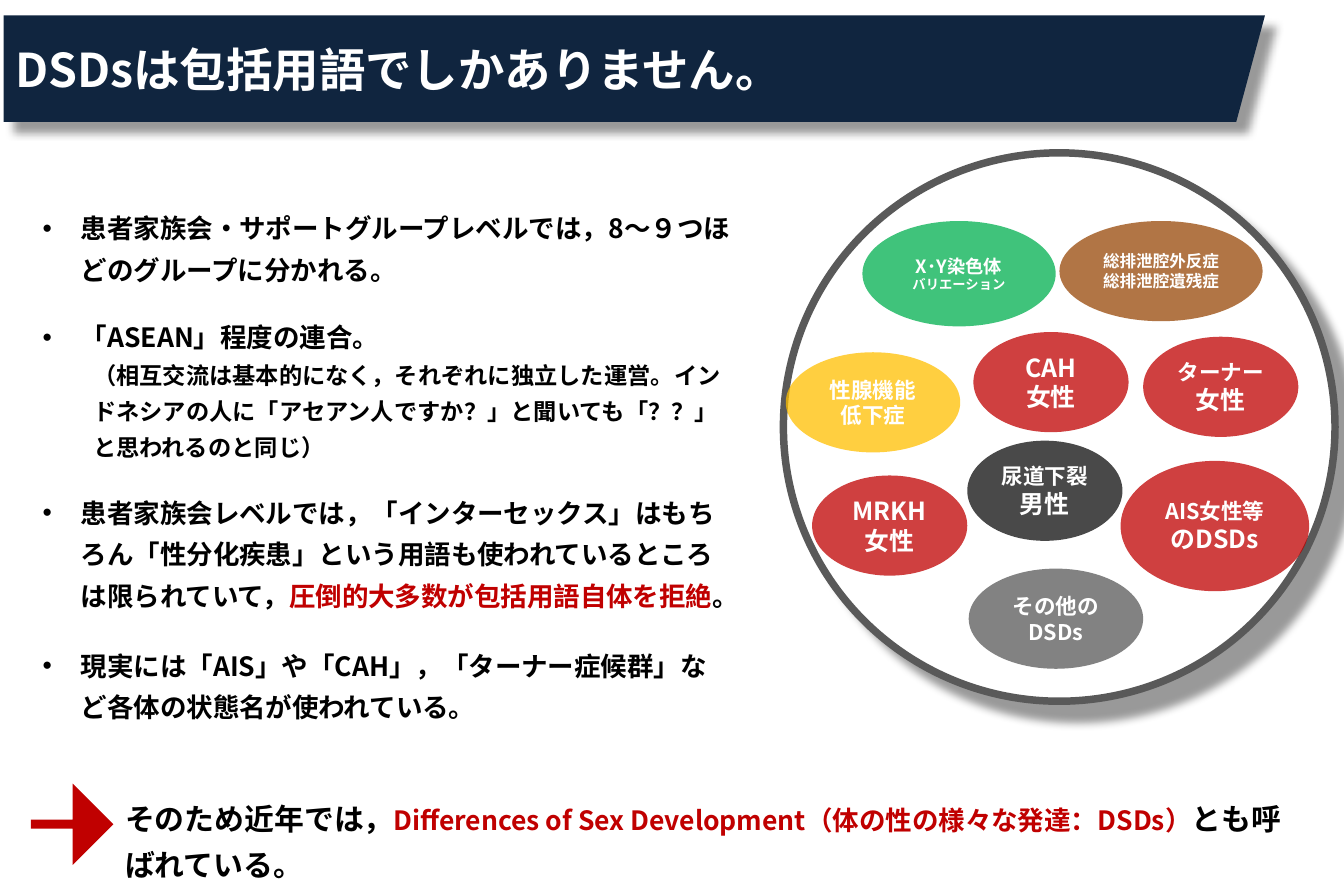
import lxml.etree
import pptx
import pptx.dml.color
import pptx.enum.shapes
import pptx.enum.text
import pptx.oxml.ns
import pptx.util

Cm, Pt = pptx.util.Cm, pptx.util.Pt
RGBColor = pptx.dml.color.RGBColor
SHAPE = pptx.enum.shapes.MSO_SHAPE
CENTER = pptx.enum.text.PP_ALIGN.CENTER
MIDDLE = pptx.enum.text.MSO_ANCHOR.MIDDLE
qn = pptx.oxml.ns.qn

FONT = "Noto Sans CJK JP"
BLACK = RGBColor(0x00, 0x00, 0x00)
WHITE = RGBColor(0xFF, 0xFF, 0xFF)
RED = RGBColor(0xC0, 0x00, 0x00)
NAVY = RGBColor(0x10, 0x25, 0x3F)
GRAY = RGBColor(0x59, 0x59, 0x59)
CHARCOAL = RGBColor(0x0D, 0x0D, 0x0D)
GREEN = RGBColor(0x00, 0xB0, 0x50)
BROWN = RGBColor(0x98, 0x48, 0x07)
AMBER = RGBColor(0xFF, 0xC0, 0x00)

# A run is (text, size) or (text, size, colour); a paragraph is a list of runs.
TITLE = [("DSDsは包括用語でしかありません。", 28)]
TITLE_OUTLINE = [(0.08, 0.33), (26.9, 0.33), (26.29, 2.59), (0.08, 2.59)]

# Space before in points, bulleted or not, runs
POINTS = [
    (0, True, [("患者家族会・サポートグループレベルでは，8～９つほどのグループに分かれる。", 16)]),
    (15.6, True, [("「ASEAN」程度の連合。", 16)]),
    (0, False, [("（相互交流は基本的になく，それぞれに独立した運営。インドネシアの人に"
                 "「アセアン人ですか？」と聞いても「？？」と思われるのと同じ）", 14)]),
    (15.6, True, [("患者家族会レベルでは，「インターセックス」はもちろん"
                   "「性分化疾患」という用語も使われているところは限られていて，", 16),
                  ("圧倒的大多数が包括用語自体を拒絶", 16, RED), ("。", 16)]),
    (17.2, True, [("現実には「AIS」や「CAH」，「ターナー症候群」など各体の状態名が使われている。", 16)]),
]
CONCLUSION = [
    ("そのため近年では，", 18),
    ("Differences of Sex Development（体の性の様々な発達：DSDs）", 16, RED),
    ("とも呼ばれている。", 18),
]

SMALL, MEDIUM = (3.3, 2.13), (3.71, 2.13)
# Left and top, size, colour, paragraphs
CONDITIONS = [
    ((17.27, 10.11), SMALL, RED, [[("MRKH女性", 15)]]),
    ((20.57, 9.37), SMALL, CHARCOAL, [[("尿道下裂", 13)], [("男性", 15)]]),
    ((20.7, 7.06), SMALL, RED, [[("CAH", 15)], [("女性", 15)]]),
    ((23.83, 9.8), (4.01, 2.77), RED, [[("AIS女性等", 13), ("のDSDs", 15)]]),
    ((24.31, 7.16), SMALL, RED, [[("ターナー", 13)], [("女性", 15)]]),
    ((18.34, 4.7), (4.11, 2.24), GREEN, [[("X･Y染色体", 11)], [("バリエーション", 8)]]),
    ((22.53, 4.7), (4.32, 2.13), BROWN, [[("総排泄腔外反症", 10)], [("総排泄腔遺残症", 10)]]),
    ((16.71, 7.49), MEDIUM, AMBER, [[("性腺機能", 13)], [("低下症", 13)]]),
    ((20.6, 12.09), MEDIUM, GRAY, [[("その他の", 13)], [("DSDs", 13)]]),
]


def add_child(parent, tag, **attributes):
    return lxml.etree.SubElement(parent, qn(tag), attributes)


def paint(shape, color, opacity=100, shadow_distance=None):
    """Fill without outline; a shadow falls to the lower right if a distance is given."""
    shape.fill.solid()
    shape.fill.fore_color.rgb = color
    shape.line.fill.background()
    shape.shadow.inherit = False
    if opacity < 100:
        fill_color = shape._element.spPr.find(qn("a:solidFill"))[0]
        add_child(fill_color, "a:alpha", val=str(opacity * 1000))
    if shadow_distance:
        effects = shape._element.spPr.find(qn("a:effectLst"))
        shadow = add_child(effects, "a:outerShdw", blurRad=str(Pt(5)),
                           dist=str(Pt(shadow_distance)), dir=str(45 * 60000),
                           algn="tl", rotWithShape="0")
        shadow_color = add_child(shadow, "a:srgbClr", val=str(BLACK))
        add_child(shadow_color, "a:alpha", val="40000")


def write(paragraph, runs, color):
    sizes = {run[1] for run in runs}
    font = paragraph.font
    font.name, font.bold = FONT, True
    add_child(paragraph._p.pPr.find(qn("a:defRPr")), "a:ea", typeface=FONT)
    if len(sizes) == 1:
        font.size = Pt(runs[0][1])
    one_color = all(len(run) == 2 for run in runs)
    if one_color:
        font.color.rgb = color
    for text, size, *own_color in runs:
        run = paragraph.add_run()
        run.text = text
        if len(sizes) > 1:
            run.font.size = Pt(size)
        if not one_color:
            run.font.color.rgb = own_color[0] if own_color else color


def next_paragraph(frame, index):
    return frame.add_paragraph() if index else frame.paragraphs[0]


def add_text_frame(shapes, left, top, width, height):
    frame = shapes.add_textbox(Cm(left), Cm(top), Cm(width), Cm(height)).text_frame
    frame.word_wrap = True
    return frame


def add_points(shapes):
    frame = add_text_frame(shapes, 0.66, 4.19, 15.16, 12.14)
    for index, (space, bulleted, runs) in enumerate(POINTS):
        paragraph = next_paragraph(frame, index)
        paragraph.line_spacing = 1.3
        paragraph.space_before = Pt(space)
        properties = paragraph._p.get_or_add_pPr()
        if bulleted:
            properties.set("marL", str(Cm(0.81)))
            properties.set("indent", str(-Cm(0.81)))
            add_child(add_child(properties, "a:buClr"), "a:srgbClr", val=str(BLACK))
            add_child(properties, "a:buFont", typeface="Arial")
            add_child(properties, "a:buChar", char="•")
        else:
            paragraph.level = 1
            properties.set("marL", str(Cm(1.07)))
            properties.set("indent", "0")
            add_child(properties, "a:buNone")
        write(paragraph, runs, BLACK)


def add_conditions(shapes):
    group = shapes.add_group_shape().shapes
    circle = group.add_shape(SHAPE.OVAL, Cm(16.66), Cm(3.25), Cm(11.73), Cm(11.66))
    paint(circle, WHITE, shadow_distance=15)
    circle.line.color.rgb = GRAY
    circle.line.width = Pt(4.5)
    for position, size, color, lines in CONDITIONS:
        condition = group.add_shape(SHAPE.OVAL, *map(Cm, position + size))
        paint(condition, color, opacity=75)
        frame = condition.text_frame
        frame.word_wrap = True
        frame.vertical_anchor = MIDDLE
        for index, runs in enumerate(lines):
            paragraph = next_paragraph(frame, index)
            paragraph.alignment = CENTER
            write(paragraph, runs, WHITE)


def add_conclusion(shapes):
    arrow = shapes.add_shape(SHAPE.RIGHT_ARROW, Cm(0.66), Cm(16.66), Cm(1.75), Cm(1.73))
    arrow.adjustments[0] = 0.11
    arrow.adjustments[1] = 0.5
    paint(arrow, RED)
    paragraph = add_text_frame(shapes, 2.41, 16.66, 25.5, 2.21).paragraphs[0]
    paragraph.line_spacing = 1.3
    write(paragraph, CONCLUSION, BLACK)


def add_title(shapes):
    start, *corners = [(Cm(x), Cm(y)) for x, y in TITLE_OUTLINE]
    outline = shapes.build_freeform(*start)
    outline.add_line_segments(corners, close=True)
    banner = outline.convert_to_shape()
    paint(banner, NAVY, shadow_distance=9)
    banner.text_frame.word_wrap = True
    banner.text_frame.vertical_anchor = MIDDLE
    paragraph = banner.text_frame.paragraphs[0]
    paragraph.alignment = pptx.enum.text.PP_ALIGN.LEFT
    write(paragraph, TITLE, WHITE)


def main():
    deck = pptx.Presentation()
    deck.slide_width, deck.slide_height = Cm(28.58), Cm(19.05)
    shapes = deck.slides.add_slide(deck.slide_layouts[6]).shapes
    add_points(shapes)
    add_conditions(shapes)
    add_conclusion(shapes)
    add_title(shapes)
    deck.save("out.pptx")


if __name__ == "__main__":
    main()
